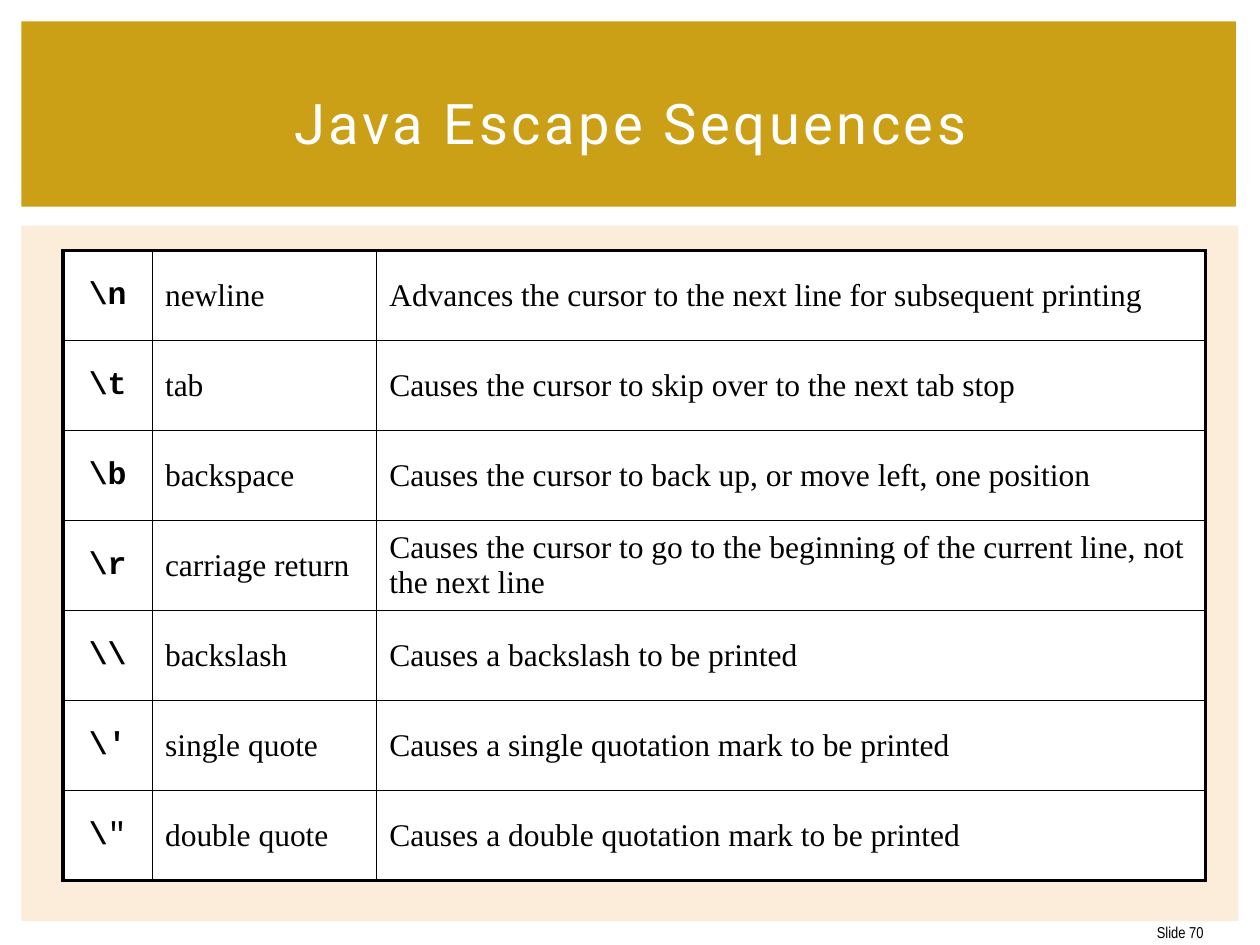
"""Build a slide with a table of Java escape sequences."""
import lxml.etree
import pptx
import pptx.dml.color
import pptx.enum.shapes
import pptx.enum.text
import pptx.oxml.ns
import pptx.util

PX = 9144
ALIGN = pptx.enum.text.PP_ALIGN
MIDDLE = pptx.enum.text.MSO_ANCHOR.MIDDLE
RECTANGLE = pptx.enum.shapes.MSO_SHAPE.RECTANGLE


def color(value):
    return pptx.dml.color.RGBColor.from_string(value)


def write(para, text, ink, align, **formats):
    para.alignment = align
    span = para.add_run()
    span.text = text
    span.font.color.rgb = color(ink)
    for name, value in formats.items():
        setattr(span.font, name, value)
    return span


deck = pptx.Presentation()
deck.slide_width, deck.slide_height = 1000 * PX, 750 * PX
page = deck.slides.add_slide(deck.slide_layouts[6])

panels = [((17, 179, 966, 552), "FCECDA"), ((17, 17, 964, 147), "CBA017")]
for place, paint in panels:
    panel = page.shapes.add_shape(RECTANGLE, *[length * PX for length in place])
    panel.shadow.inherit = False
    panel.fill.solid()
    panel.fill.fore_color.rgb = color(paint)
    panel.line.fill.background()

labels = [
    ((901, 725, 64, 30), "Slide 70", "000000", ALIGN.RIGHT, {"name": "Arial Narrow", "size": pptx.util.Pt(9)}, 0),
    ((42, 39, 917, 115), "Java Escape Sequences", "FFFFFF", ALIGN.CENTER, {"name": "Roboto", "size": pptx.util.Pt(32)}, 200),
]
for place, text, ink, align, formats, spacing in labels:
    box = page.shapes.add_textbox(*[length * PX for length in place])
    box.text_frame.word_wrap = True
    box.text_frame.vertical_anchor = MIDDLE
    span = write(box.text_frame.paragraphs[0], text, ink, align, **formats)
    if spacing:
        span.font._element.set("spc", str(spacing))

sequences = [
    ("\\n", "newline", "Advances the cursor to the next line for subsequent printing"),
    ("\\t", "tab", "Causes the cursor to skip over to the next tab stop"),
    ("\\b", "backspace", "Causes the cursor to back up, or move left, one position"),
    ("\\r", "carriage return", "Causes the cursor to go to the beginning of the current line, not the next line"),
    ("\\\\", "backslash", "Causes a backslash to be printed"),
    ("\\'", "single quote", "Causes a single quotation mark to be printed"),
    ("\\\"", "double quote", "Causes a double quotation mark to be printed"),
]
widths = [71, 178, 658]
last_row, last_column = len(sequences) - 1, len(widths) - 1
table = page.shapes.add_table(len(sequences), len(widths), 50 * PX, 199 * PX, sum(widths) * PX, 500 * PX).table
table.first_row = table.horz_banding = False
for column, width in zip(table.columns, widths):
    column.width = width * PX

for row, texts in enumerate(sequences):
    table.rows[row].height = 500 * PX // len(sequences)
    for column, text in enumerate(texts):
        cell = table.cell(row, column)
        cell.vertical_anchor = MIDDLE
        para = cell.text_frame.paragraphs[0]
        formats = {"name": "Times New Roman", "size": pptx.util.Pt(18), "bold": False}
        if column == 0:
            formats["name"] = "Courier New"
            for sign in [text[0], text[1]] if row == last_row else [text]:
                write(para, sign, "000000", ALIGN.CENTER, **{**formats, "bold": sign != '"'})
        else:
            write(para, text, "000000", ALIGN.LEFT, **formats)
        outer = {"lnL": column == 0, "lnR": column == last_column, "lnT": row == 0, "lnB": row == last_row}
        for side, thick in outer.items():
            border = lxml.etree.SubElement(cell._tc.get_or_add_tcPr(), pptx.oxml.ns.qn(f"a:{side}"))
            border.set("w", str(pptx.util.Pt(2.25 if thick else 1)))
            paint = lxml.etree.SubElement(border, pptx.oxml.ns.qn("a:solidFill"))
            lxml.etree.SubElement(paint, pptx.oxml.ns.qn("a:srgbClr")).set("val", "000000")
        cell.fill.solid()
        cell.fill.fore_color.rgb = color("FFFFFF")

deck.save("out.pptx")
